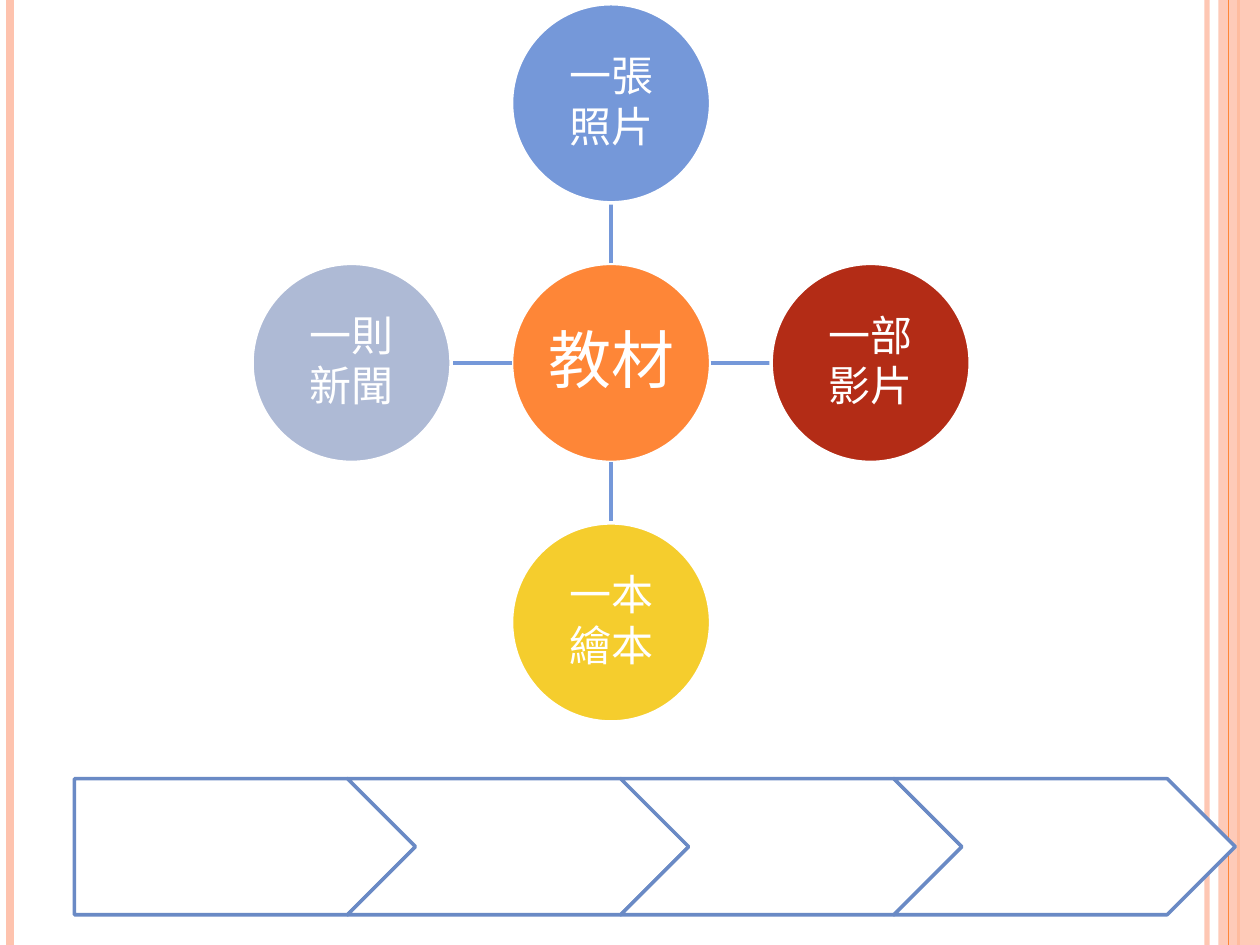
from dataclasses import dataclass
from typing import NamedTuple

from pptx import Presentation
from pptx import util as u
from pptx.dml.color import RGBColor
from pptx.enum import shapes, text
from pptx.oxml import ns
from lxml import etree


@dataclass(frozen=True)
class Theme:
    font: str = "Noto Sans CJK SC"
    big: float = 36
    small: float = 24
    white: str = "FFFFFF"
    orange: str = "FE8637"
    peach: str = "FEC3AE"
    blue: str = "7598D9"
    steel: str = "6A8AC5"
    red: str = "B32C16"
    gold: str = "F5CD2D"
    mist: str = "AEBAD5"
    edge: float = 2


class Rule(NamedTuple):
    x: float
    color: str
    width: float
    alpha: int = 100


class Node(NamedTuple):
    col: int
    row: int
    label: str
    fill: str


T = Theme()
WIDE, HIGH = 10, 7.5

# Wheel grid: one step between circle centres
MID_X, MID_Y = 4.85, 2.88
STEP, DIAM = 2.06, 1.58

# Chevron row
LEFT, TOP, ARROW_W, ARROW_H = 0.59, 6.18, 2.71, 1.08
PITCH = ARROW_W * 0.8

BACK = [Rule(9.58, T.peach, 3, 93), Rule(0.08, T.peach, 4.5),
        Rule(9.83, T.orange, 1.5)]
FRONT = Rule(9.75, T.orange, 0.75)
HUB = Node(0, 0, "教材", T.orange)
NODES = [
    Node(0, -1, "一張\n照片", T.blue),
    Node(1, 0, "一部\n影片", T.red),
    Node(0, 1, "一本\n繪本", T.gold),
    Node(-1, 0, "一則\n新聞", T.mist),
]


def fade(part, alpha: int) -> None:
    """Set the opacity, in percent, of a solid colour."""
    tone = next(part.iter(ns.qn("a:srgbClr")))
    etree.SubElement(tone, ns.qn("a:alpha"), val=str(alpha * 1000))


def add_line(slide, x1: float, y1: float, x2: float, y2: float,
             color: str, width: float):
    line = slide.shapes.add_connector(
        shapes.MSO_CONNECTOR.STRAIGHT, *map(u.Inches, (x1, y1, x2, y2)))
    line.line.color.rgb = RGBColor.from_string(color)
    line.line.width = u.Pt(width)
    etree.SubElement(line._element.spPr, ns.qn("a:effectLst"))
    return line


def add_rule(slide, rule: Rule) -> None:
    line = add_line(slide, rule.x, 0, rule.x, HIGH, rule.color, rule.width)
    if rule.alpha < 100:
        fade(line._element.spPr, rule.alpha)


def add_form(slide, kind, x: float, y: float, w: float, h: float,
             fill: str, edge: str | None = None):
    form = slide.shapes.add_shape(kind, *map(u.Inches, (x, y, w, h)))
    form.shadow.inherit = False
    form.fill.solid()
    form.fill.fore_color.rgb = RGBColor.from_string(fill)
    if edge:
        form.line.color.rgb = RGBColor.from_string(edge)
        form.line.width = u.Pt(T.edge)
    else:
        form.line.fill.background()
    return form


def add_node(slide, node: Node, size: float) -> None:
    x = MID_X + node.col * STEP - DIAM / 2
    y = MID_Y + node.row * STEP - DIAM / 2
    disc = add_form(slide, shapes.MSO_SHAPE.OVAL, x, y, DIAM, DIAM,
                    node.fill, T.white)
    frame = disc.text_frame
    frame.text = node.label
    frame.word_wrap = True
    frame.vertical_anchor = text.MSO_ANCHOR.MIDDLE
    frame.margin_left = frame.margin_right = u.Inches(0.02)
    frame.margin_top = frame.margin_bottom = u.Inches(0.02)
    for para in frame.paragraphs:
        para.alignment = text.PP_ALIGN.CENTER
        para.line_spacing = 0.9
        para.space_after = u.Pt(size / 8)
        for run in para.runs:
            run.font.size = u.Pt(size)
            run.font.name = T.font
            run.font.color.rgb = RGBColor.from_string(T.white)
            etree.SubElement(run._r.get_or_add_rPr(), ns.qn("a:ea"),
                             typeface=T.font)


def add_spoke(slide, node: Node) -> None:
    near, far = DIAM / 2, STEP - DIAM / 2
    add_line(slide, MID_X + node.col * near, MID_Y + node.row * near,
             MID_X + node.col * far, MID_Y + node.row * far, T.blue, T.edge)


def main() -> None:
    deck = Presentation()
    deck.slide_width, deck.slide_height = u.Inches(WIDE), u.Inches(HIGH)
    slide = deck.slides.add_slide(deck.slide_layouts[6])

    # Side stripes
    for rule in BACK:
        add_rule(slide, rule)
    band = add_form(slide, shapes.MSO_SHAPE.RECTANGLE,
                    WIDE - 0.33, 0, 0.33, HIGH, T.peach)
    fade(band._element.spPr, 87)
    add_rule(slide, FRONT)

    # Hub with four materials around it
    add_node(slide, HUB, T.big)
    for node in NODES:
        add_spoke(slide, node)
        add_node(slide, node, T.small)

    # Row of empty steps
    kinds = [shapes.MSO_SHAPE.PENTAGON] + [shapes.MSO_SHAPE.CHEVRON] * 3
    for i, kind in enumerate(kinds):
        add_form(slide, kind, LEFT + i * PITCH, TOP, ARROW_W, ARROW_H,
                 T.white, T.steel)

    deck.save("out.pptx")


if __name__ == "__main__":
    main()
